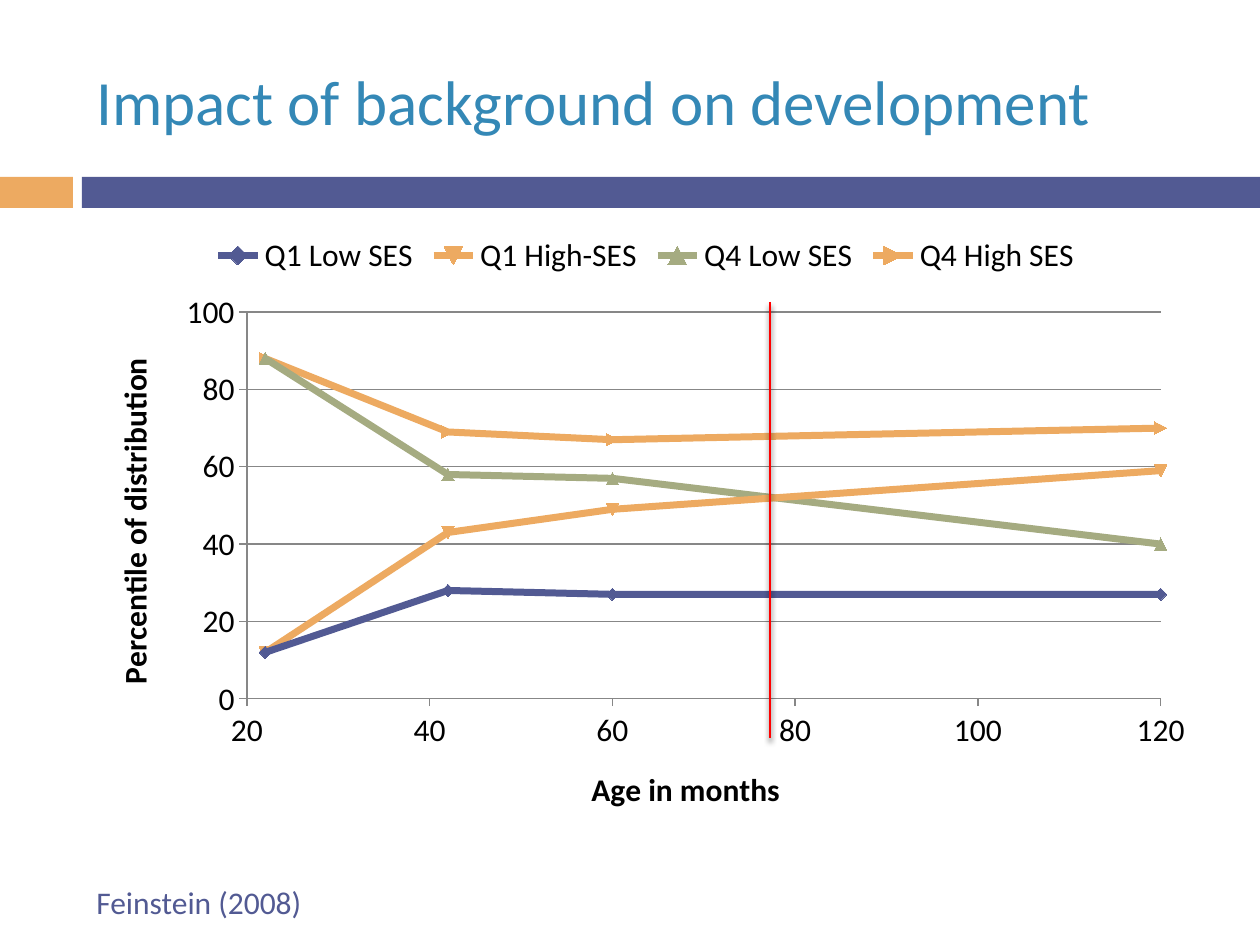
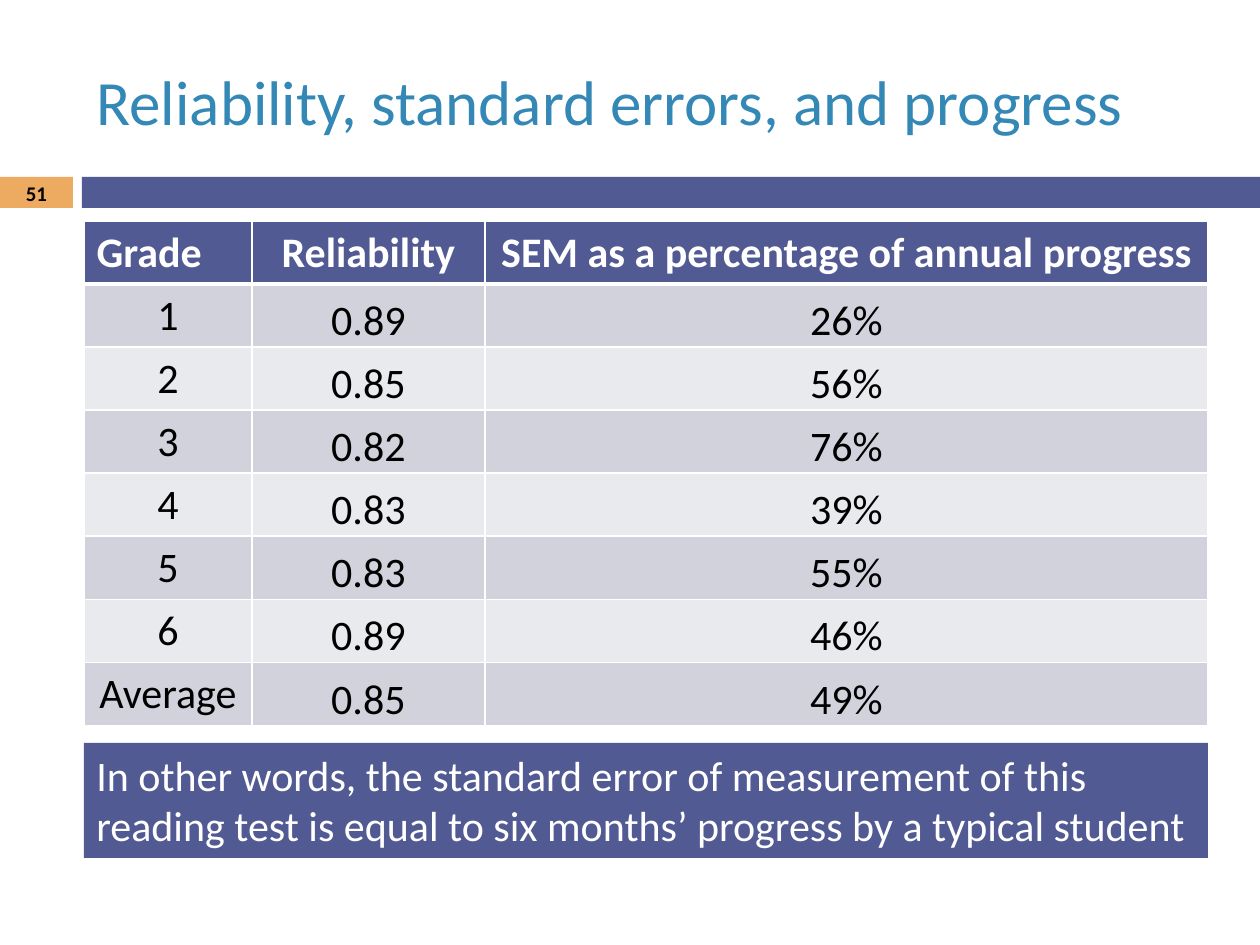
from lxml.etree import SubElement
from pptx import Presentation
from pptx.chart.data import XyChartData
from pptx.dml.color import RGBColor
from pptx.enum.chart import XL_CHART_TYPE, XL_LEGEND_POSITION, XL_MARKER_STYLE, XL_TICK_MARK
from pptx.enum.shapes import MSO_CONNECTOR, MSO_SHAPE
from pptx.enum.text import MSO_ANCHOR, PP_ALIGN
from pptx.oxml import parse_xml
from pptx.oxml.ns import nsdecls, qn
from pptx.util import Pt

SCALE = 914400 / 126
FONT = "Calibri"
COLORS = {
    "title": "3488B6", "navy": "525A93", "orange": "EDAA61", "sage": "A5AB81",
    "red": "FF0000", "black": "000000", "white": "FFFFFF", "grid": "878787",
    "row_dark": "D1D2DC", "row_light": "E9EAEE",
}
LEFT, WIDTH = 84, 1124


def px(*lengths):
    return [round(n * SCALE) for n in lengths]


def add_text(tf, text, size, color, bold=False, align=PP_ALIGN.LEFT):
    p = tf.paragraphs[0]
    p.alignment = align
    r = p.add_run()
    r.text = text
    r.font.name, r.font.size, r.font.bold = FONT, Pt(size), bold
    r.font.color.rgb = RGBColor.from_string(COLORS[color])


prs = Presentation()
prs.slide_width, prs.slide_height = px(1260, 945)

# Shared title style
layout = prs.slide_layouts[5]
title_style = prs.slide_master.element.find(".//" + qn("p:titleStyle"))
level = title_style.find(qn("a:lvl1pPr"))
level.set("algn", "l")
run_style = level.find(qn("a:defRPr"))
run_style.set("sz", "3600")
run_style.find(".//" + qn("a:schemeClr")).getparent().replace(
    run_style.find(".//" + qn("a:schemeClr")),
    parse_xml(f'<a:srgbClr {nsdecls("a")} val="{COLORS["title"]}"/>'))
sp = layout.placeholders[0]
sp.left, sp.top, sp.width, sp.height = px(LEFT, 32, WIDTH, 136)

slides = []
for title in ("Impact of background on development",
              "Reliability, standard errors, and progress"):
    s = prs.slides.add_slide(layout)
    s.shapes.title.text_frame.text = title
    slides.append(s)
chart_slide, table_slide = slides

# Shared bands, moved from the first slide to the layout
for left, width, color in ((0, 73, "orange"), (82, 1178, "navy")):
    sp = chart_slide.shapes.add_shape(MSO_SHAPE.RECTANGLE, *px(left, 177, width, 31))
    sp.shadow.inherit = False
    sp.fill.solid()
    sp.fill.fore_color.rgb = RGBColor.from_string(COLORS[color])
    sp.line.fill.background()
    layout.shapes.element.insert(2, sp.element)

# Slide 1: source
tb = chart_slide.shapes.add_textbox(*px(LEFT, 877, 330, 50))
tb.text_frame.word_wrap = True
add_text(tb.text_frame, "Feinstein (2008)", 18, "navy")

# Slide 1: chart
ages = (22, 42, 60, 120)
series_data = (
    ("Q1 Low SES", (12, 28, 27, 27), "navy", XL_MARKER_STYLE.DIAMOND),
    ("Q1 High-SES", (12, 43, 49, 59), "orange", XL_MARKER_STYLE.AUTOMATIC),
    ("Q4 Low SES", (88, 58, 57, 40), "sage", XL_MARKER_STYLE.TRIANGLE),
    ("Q4 High SES", (88, 69, 67, 70), "orange", XL_MARKER_STYLE.DOT),
)
data = XyChartData()
for name, values, _, _ in series_data:
    series = data.add_series(name)
    for age, value in zip(ages, values):
        series.add_data_point(age, value)
chart = chart_slide.shapes.add_chart(
    XL_CHART_TYPE.XY_SCATTER_LINES, *px(LEFT, 221, WIDTH, 620), data).chart
chart.has_title = False
chart.font.name, chart.font.size = FONT, Pt(18)
chart.font.color.rgb = RGBColor.from_string(COLORS["black"])
chart.has_legend = True
chart.legend.position = XL_LEGEND_POSITION.TOP
chart.legend.include_in_layout = False

plot = chart.plots[0]
plot.vary_by_categories = False
for series, (_, _, color, marker) in zip(plot.series, series_data):
    rgb = RGBColor.from_string(COLORS[color])
    series.smooth = False
    series.format.line.width = Pt(4)
    series.format.line.color.rgb = rgb
    series.marker.style, series.marker.size = marker, 7
    series.marker.format.fill.solid()
    series.marker.format.fill.fore_color.rgb = rgb
    series.marker.format.line.fill.background()
for i in range(1, len(ages)):
    point = plot.series[1].points[i]
    point.marker.style, point.marker.size = XL_MARKER_STYLE.AUTOMATIC, 7
    point.marker.format.fill.solid()
    point.marker.format.fill.fore_color.rgb = RGBColor.from_string(COLORS["title"])
    point.format.line.width = Pt(4)
    point.format.line.color.rgb = RGBColor.from_string(COLORS["orange"])

for axis, text, top in ((chart.category_axis, "Age in months", 120),
                        (chart.value_axis, "Percentile of distribution", 100)):
    axis.minimum_scale, axis.maximum_scale, axis.major_unit = top % 100, top, 20
    axis.major_tick_mark = XL_TICK_MARK.OUTSIDE
    axis.format.line.color.rgb = RGBColor.from_string(COLORS["grid"])
    axis.has_major_gridlines = False
    add_text(axis.axis_title.text_frame, text, 18, "black", True, PP_ALIGN.CENTER)
chart.value_axis.has_major_gridlines = True
grid = chart.value_axis.major_gridlines.format.line
grid.color.rgb = RGBColor.from_string(COLORS["grid"])

# Fixed plot area, as fractions of the chart
plot_area = chart.element.find(".//" + qn("c:plotArea"))
for old in plot_area.findall(qn("c:layout")):
    plot_area.remove(old)
plot_area.insert(0, parse_xml(
    f'<c:layout {nsdecls("c")}><c:manualLayout><c:layoutTarget val="inner"/>'
    '<c:xMode val="edge"/><c:yMode val="edge"/><c:x val="0.145"/><c:y val="0.147"/>'
    '<c:w val="0.813"/><c:h val="0.624"/></c:manualLayout></c:layout>'))

# Slide 1: age marker line with a soft shadow
x, top, bottom = px(770, 302, 738)
line = chart_slide.shapes.add_connector(MSO_CONNECTOR.STRAIGHT, x, top, x, bottom)
line.line.width = Pt(1.5)
line.line.color.rgb = RGBColor.from_string(COLORS["red"])
line.element.spPr.append(parse_xml(
    f'<a:effectLst {nsdecls("a")}><a:outerShdw blurRad="38100" dist="30480" dir="5400000">'
    f'<a:srgbClr val="{COLORS["black"]}"><a:alpha val="45000"/></a:srgbClr>'
    '</a:outerShdw></a:effectLst>'))

# Slide 2: page number
tb = table_slide.shapes.add_textbox(*px(0, 176, 73, 34))
tb.text_frame.word_wrap = True
tb.text_frame.vertical_anchor = MSO_ANCHOR.MIDDLE
add_text(tb.text_frame, "51", 11.9, "black", True, PP_ALIGN.CENTER)

# Slide 2: table
rows = (
    ("Grade", "Reliability", "SEM as a percentage of annual progress"),
    ("1", "0.89", "26%"),
    ("2", "0.85", "56%"),
    ("3", "0.82", "76%"),
    ("4", "0.83", "39%"),
    ("5", "0.83", "55%"),
    ("6", "0.89", "46%"),
    ("Average", "0.85", "49%"),
)
table = table_slide.shapes.add_table(
    len(rows), 3, *px(LEFT, 221, WIDTH, 416)).table
for column, width in zip(table.columns, px(168, 233, 723)):
    column.width = width
for i, row in enumerate(rows):
    table.rows[i].height = px(52)[0]
    for j, text in enumerate(row):
        cell = table.cell(i, j)
        header = i == 0
        add_text(cell.text_frame, text, 24, "white" if header else "black", header,
                 PP_ALIGN.LEFT if header and j == 0 else PP_ALIGN.CENTER)
        if not header and j > 0:
            cell.vertical_anchor = MSO_ANCHOR.BOTTOM
            cell.margin_left = cell.margin_top = cell.margin_right = px(1)[0]
            cell.margin_bottom = 0
        tc_pr = cell._tc.get_or_add_tcPr()
        for side in ("lnL", "lnR", "lnT", "lnB"):
            thick = (i, side) in ((0, "lnB"), (1, "lnT"))
            ln = SubElement(tc_pr, qn("a:" + side), w=str(Pt(3 if thick else 1)))
            fill = SubElement(ln, qn("a:solidFill"))
            SubElement(fill, qn("a:srgbClr"), val=COLORS["white"])
        cell.fill.solid()
        shade = "navy" if header else "row_dark" if i % 2 else "row_light"
        cell.fill.fore_color.rgb = RGBColor.from_string(COLORS[shade])

# Slide 2: conclusion
sp = table_slide.shapes.add_shape(MSO_SHAPE.RECTANGLE, *px(LEFT, 743, WIDTH, 115))
sp.shadow.inherit = False
sp.fill.solid()
sp.fill.fore_color.rgb = RGBColor.from_string(COLORS["navy"])
sp.line.fill.background()
sp.text_frame.word_wrap = True
sp.text_frame.vertical_anchor = MSO_ANCHOR.TOP
add_text(sp.text_frame, "In other words, the standard error of measurement of this reading "
         "test is equal to six months’ progress by a typical student", 24, "white")

prs.save("out.pptx")
